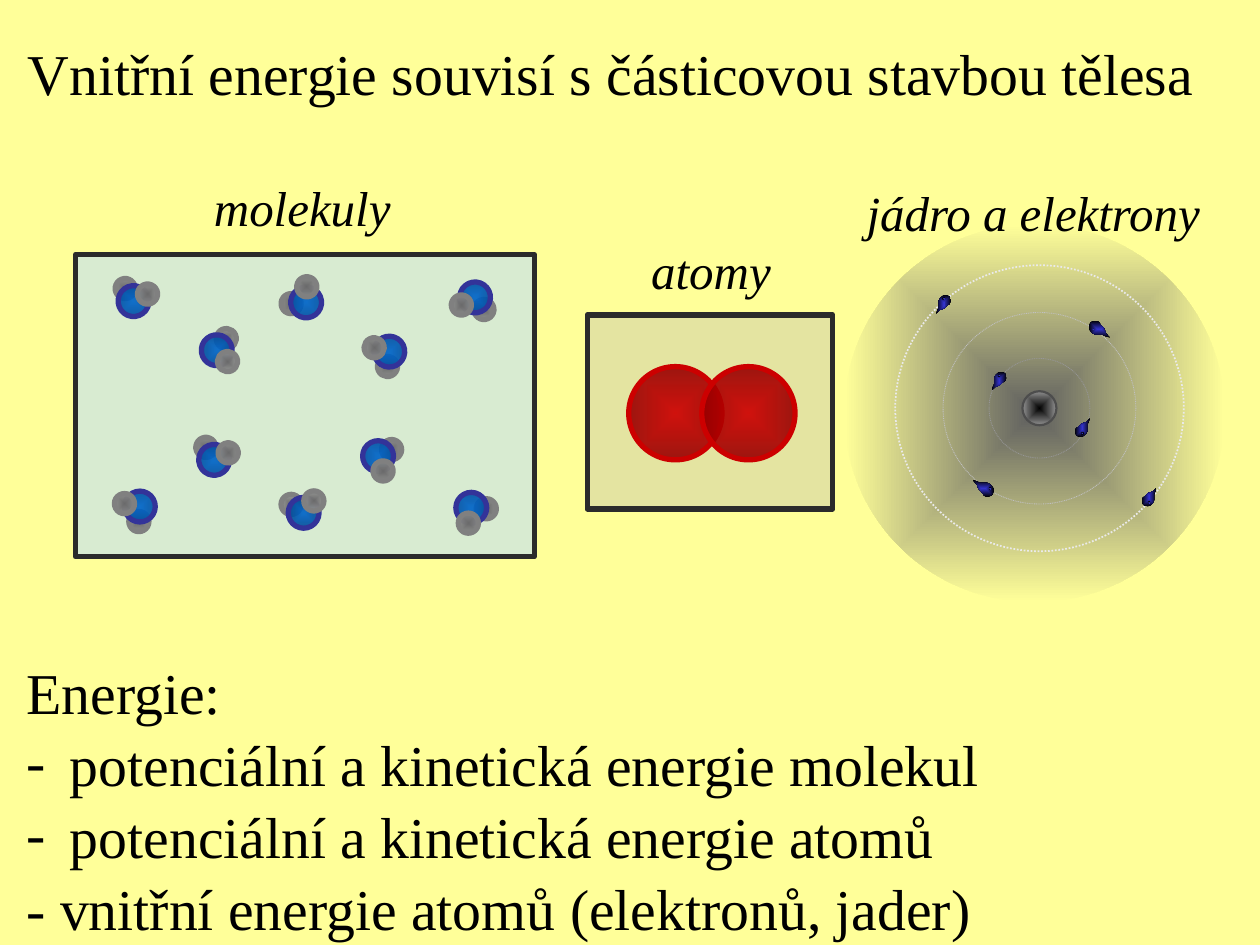
from dataclasses import dataclass
from math import cos, radians, sin

from lxml.etree import SubElement
from pptx import Presentation
from pptx.dml.color import RGBColor
from pptx.enum.dml import MSO_LINE
from pptx.enum.shapes import MSO_SHAPE
from pptx.enum.text import MSO_ANCHOR, MSO_AUTO_SIZE, PP_ALIGN
from pptx.oxml.ns import qn
from pptx.util import Inches, Pt

FONT = "Times New Roman"
YELLOW = RGBColor(0xFF, 0xFF, 0x99)
BLACK = RGBColor(0, 0, 0)
FRAME = RGBColor(0x2B, 0x2B, 0x2B)
PALE_BLUE = RGBColor(0xB9, 0xDC, 0xFF)
SILVER = RGBColor(0xB2, 0xB2, 0xB2)
CLOUD_GRAY = RGBColor(0x5F, 0x5F, 0x5F)
RED_EDGE = RGBColor(0xCC, 0, 0)
NUCLEUS_EDGE = RGBColor(0x4D, 0x4D, 0x4D)


@dataclass
class Stop:
    color: RGBColor
    alpha: int = 100


@dataclass
class Style:
    stops: tuple = ()
    line: RGBColor | None = None
    width: float = 3
    dotted: bool = False
    path_kind: str = "shape"


@dataclass
class Molecule:
    x: float
    y: float
    angle: float


@dataclass
class Electron:
    x: float
    y: float
    angle: int
    scale: float = 1


@dataclass
class Orbit:
    width: float
    height: float
    color: RGBColor
    line_width: float


@dataclass
class Label:
    text: str
    left: float
    top: float
    width: float


HYDROGEN = Style((Stop(RGBColor(0x6B, 0x6B, 0x6B)), Stop(RGBColor(0x96, 0x96, 0x96), 92)),
                 RGBColor(0x80, 0x80, 0x80))
OXYGEN = Style((Stop(RGBColor(0, 0x66, 0xCC), 92), Stop(RGBColor(0, 0x49, 0x92), 90)),
               RGBColor(0x33, 0x33, 0x99))
ATOM = Style((Stop(RGBColor(0xD0, 0, 0), 92), Stop(RGBColor(0x95, 0, 0), 90)), RED_EDGE)
CLOUD = Style((Stop(CLOUD_GRAY), Stop(YELLOW)))
NUCLEUS = Style((Stop(BLACK), Stop(RGBColor(0x90, 0x90, 0x90))), NUCLEUS_EDGE, 1.25)
ELECTRON = Style((Stop(RGBColor(0x33, 0x33, 0xCC)), Stop(BLACK)), path_kind="rect")

MOLECULE_PARTS = [(-0.1, -0.065, 0.16, HYDROGEN), (0, 0, 0.245, OXYGEN),
                  (0.08, -0.095, 0.16, HYDROGEN)]
MOLECULES = [
    Molecule(1.06, 2.39, 23.3), Molecule(2.43, 2.4, 322.2), Molecule(3.77, 2.36, 200.6),
    Molecule(1.11, 4.02, 240.7), Molecule(2.41, 4.07, 0.8), Molecule(3.74, 4.03, 150.7),
    Molecule(1.72, 2.78, 96.3), Molecule(3.09, 2.79, 244), Molecule(1.7, 3.65, 23.3),
    Molecule(3, 3.62, 121.3),
]
ORBITS = [Orbit(1.53, 1.52, RGBColor(0xC0, 0xC0, 0xC0), 0.5),
          Orbit(0.8, 0.79, RGBColor(0x96, 0x96, 0x96), 0.5),
          Orbit(2.29, 2.27, RGBColor(0xEA, 0xEA, 0xEA), 1)]
DROP = [(0, 0), (-0.01, 0.03), (-0.02, 0.05), (-0.02, 0.1), (-0.03, 0.12), (-0.05, 0.14),
        (-0.07, 0.15), (-0.1, 0.14), (-0.11, 0.13), (-0.12, 0.1), (-0.11, 0.08),
        (-0.08, 0.06), (-0.06, 0.04), (-0.03, 0.03)]
ELECTRONS = [Electron(9.18, 3.87, 0), Electron(7.43, 2.49, 180), Electron(7.72, 3.81, 270, 1.13),
             Electron(8.65, 3.32, 0), Electron(7.87, 3.1, 180), Electron(8.81, 2.68, 90, 1.13)]
LABELS = [Label("molekuly", 1.6, 1.32, 1.6), Label("atomy", 5.07, 1.82, 1.16),
          Label("jádro a elektrony", 6.78, 1.36, 2.87)]


def add_color(parent, stop: Stop) -> None:
    color = SubElement(parent, qn("a:srgbClr"), val=str(stop.color))
    if stop.alpha < 100:
        SubElement(color, qn("a:alpha"), val=str(stop.alpha * 1000))


def apply_style(sp, style: Style) -> None:
    sp.shadow.inherit = False
    if len(style.stops) == 0:
        sp.fill.background()
    else:
        sp.fill.solid()
        sp.fill.fore_color.rgb = style.stops[0].color
        solid = sp._element.spPr.find(qn("a:solidFill"))
        if len(style.stops) == 1:
            solid.remove(solid[0])
            add_color(solid, style.stops[0])
        else:
            grad = solid.makeelement(qn("a:gradFill"), {"rotWithShape": "1"})
            stops = SubElement(grad, qn("a:gsLst"))
            for pos, stop in zip((0, 100000), style.stops):
                add_color(SubElement(stops, qn("a:gs"), pos=str(pos)), stop)
            path = SubElement(grad, qn("a:path"), attrib={"path": style.path_kind})
            SubElement(path, qn("a:fillToRect"), l="50000", t="50000", r="50000", b="50000")
            sp._element.spPr.replace(solid, grad)
    if style.line is None:
        sp.line.fill.background()
        return
    sp.line.color.rgb = style.line
    sp.line.width = Pt(style.width)
    if style.dotted:
        sp.line.dash_style = MSO_LINE.ROUND_DOT


def add_ellipse(shapes, x: float, y: float, w: float, h: float, style: Style,
                angle: float = 0) -> None:
    sp = shapes.add_shape(MSO_SHAPE.OVAL, Inches(x - w / 2), Inches(y - h / 2),
                          Inches(w), Inches(h))
    sp.rotation = angle
    apply_style(sp, style)


def add_box(shapes, x: float, y: float, w: float, h: float, fill: Stop) -> None:
    sp = shapes.add_shape(MSO_SHAPE.RECTANGLE, Inches(x), Inches(y), Inches(w), Inches(h))
    apply_style(sp, Style((fill,), FRAME))


def turn(x: float, y: float, angle: float) -> tuple[float, float]:
    a = radians(angle)
    return x * cos(a) - y * sin(a), x * sin(a) + y * cos(a)


def add_molecule(shapes, m: Molecule) -> None:
    group = shapes.add_group_shape()
    for x, y, size, style in MOLECULE_PARTS:
        dx, dy = turn(x, y, m.angle)
        add_ellipse(group.shapes, m.x + dx, m.y + dy, size, size, style, m.angle)


def add_electron(shapes, e: Electron) -> None:
    def place(x: float, y: float) -> tuple[float, float]:
        dx, dy = turn(x * e.scale, y * e.scale, e.angle)
        return e.x + dx, e.y + dy

    group = shapes.add_group_shape()
    points = [(Inches(x), Inches(y)) for x, y in (place(*point) for point in DROP)]
    builder = group.shapes.build_freeform(*points[0])
    builder.add_line_segments(points[1:])
    apply_style(builder.convert_to_shape(), ELECTRON)
    add_ellipse(group.shapes, *place(-0.06, 0.12), 0.02, 0.02, ELECTRON)


def write_text(sp, box: tuple, lines: list[str], size: int, italic: bool = False,
               inset: float = 0.1, spacing: float = 1) -> None:
    sp.left, sp.top, sp.width, sp.height = (Inches(v) for v in box)
    tf = sp.text_frame
    tf.word_wrap = False
    tf.auto_size = MSO_AUTO_SIZE.NONE
    tf.vertical_anchor = MSO_ANCHOR.TOP
    tf.margin_left = tf.margin_right = Inches(inset)
    tf.margin_top, tf.margin_bottom = Inches(0.09), Inches(0)
    for i, line in enumerate(lines):
        p = tf.paragraphs[0] if i == 0 else tf.add_paragraph()
        p.alignment = PP_ALIGN.LEFT
        p.line_spacing = spacing
        p.space_before = Pt(0)
        r = p.add_run()
        r.text = line
        r.font.name, r.font.size, r.font.italic = FONT, Pt(size), italic
        r.font.color.rgb = BLACK


def set_bullet(p, char: str | None) -> None:
    indent = Inches(0.23) if char else 0
    pPr = p._p.get_or_add_pPr()
    pPr.set("marL", str(indent))
    pPr.set("indent", str(-indent))
    if char:
        SubElement(pPr, qn("a:buFont"), typeface=FONT)
        SubElement(pPr, qn("a:buChar"), char=char)
    else:
        SubElement(pPr, qn("a:buNone"))


def main() -> None:
    prs = Presentation()
    prs.slide_width, prs.slide_height = Inches(10), Inches(7.5)
    s = prs.slides.add_slide(prs.slide_layouts[1])
    s.background.fill.solid()
    s.background.fill.fore_color.rgb = YELLOW

    write_text(s.shapes.title, (0.14, 0.21, 9.5, 0.66),
               ["Vnitřní energie souvisí s částicovou stavbou tělesa"], 33, inset=0.08)
    body = s.placeholders[1]
    write_text(body, (0.11, 5.1, 7.88, 2.32),
               ["Energie:", " potenciální a kinetická energie molekul",
                " potenciální a kinetická energie atomů",
                "- vnitřní energie atomů (elektronů, jader)"], 33, spacing=1.04)
    for p, char in zip(body.text_frame.paragraphs, (None, "-", "-", None)):
        set_bullet(p, char)

    add_ellipse(s.shapes, 8.21, 3.28, 3.02, 3, CLOUD)
    add_box(s.shapes, 0.6, 2.02, 3.64, 2.4, Stop(PALE_BLUE, 55))
    for molecule in MOLECULES:
        add_molecule(s.shapes, molecule)
    add_box(s.shapes, 4.66, 2.5, 1.95, 1.54, Stop(SILVER, 34))
    for x in (5.36, 5.94):
        add_ellipse(s.shapes, x, 3.28, 0.74, 0.74, ATOM)
    add_ellipse(s.shapes, 8.25, 3.24, 0.27, 0.27, NUCLEUS)
    for o in ORBITS:
        add_ellipse(s.shapes, 8.25, 3.24, o.width, o.height,
                    Style(line=o.color, width=o.line_width, dotted=True))
    for electron in ELECTRONS:
        add_electron(s.shapes, electron)
    for label in LABELS:
        box = (label.left, label.top, label.width, 0.57)
        write_text(s.shapes.add_textbox(0, 0, 0, 0), box, [label.text], 28, italic=True)
    prs.save("out.pptx")


if __name__ == "__main__":
    main()
